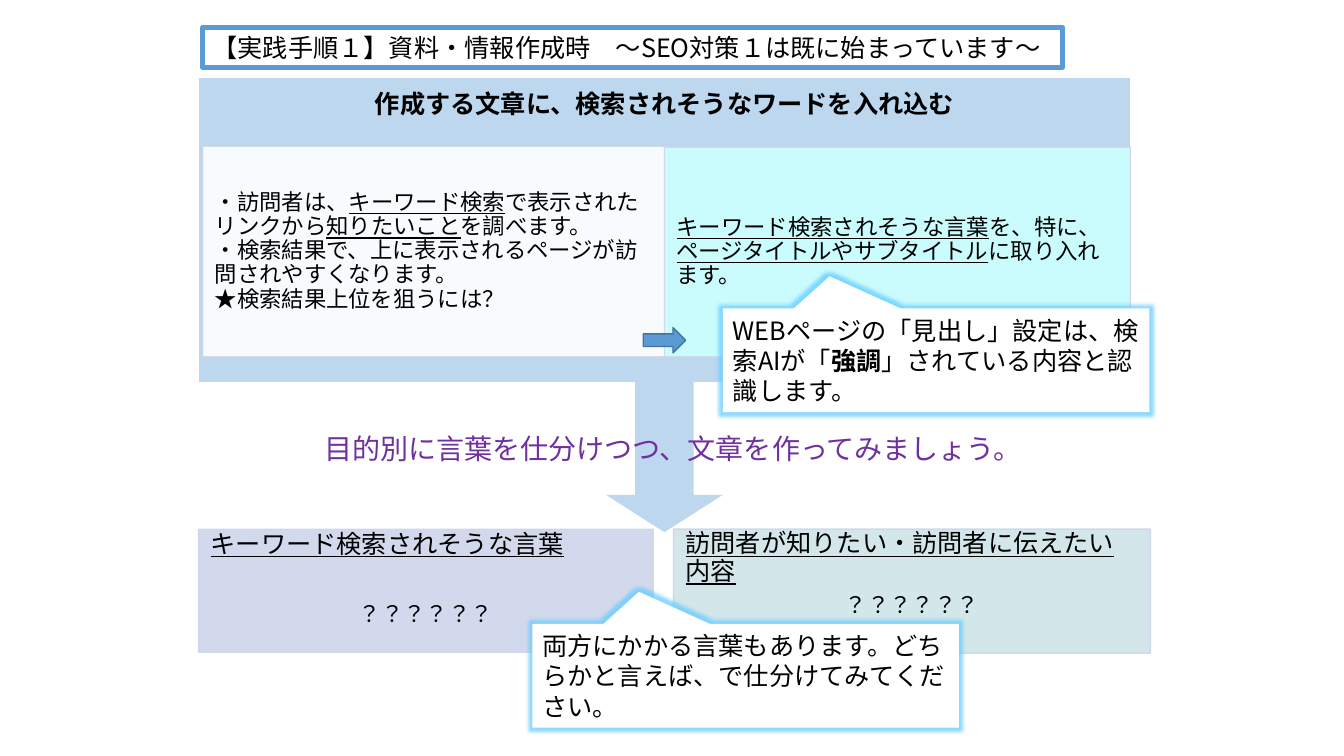
from lxml.etree import SubElement
from pptx import Presentation
from pptx.dml.color import RGBColor
from pptx.enum.shapes import MSO_SHAPE as SHAPE
from pptx.enum.text import MSO_ANCHOR as ANCHOR, PP_ALIGN as ALIGN
from pptx.oxml.ns import qn
from pptx.util import Inches, Pt

FONT = "Noto Sans CJK JP"
COLORS = {
    "white": "FFFFFF", "black": "000000", "purple": "7030A0",
    "sky": "BDD7EE", "blue": "5B9BD5", "navy": "43739E", "glow": "66CCFF",
    "aqua": "CCFFFF", "teal": "CFE5E8", "lavender": "CFD5EA",
}
DEFAULT_INSETS = (0.1, 0.05)
PANEL_INSETS = (0.12, 0.02)


class SlideBuilder:
    def __init__(self, slide):
        self.shapes = slide.shapes

    def set_alpha(self, fill, percent):
        color = fill.find(".//" + qn("a:srgbClr"))
        SubElement(color, qn("a:alpha"), val=str(percent * 1000))

    def shape(self, kind, box, fill, line=None, width=1):
        s = self.shapes.add_shape(kind, *map(Inches, box))
        s.shadow.inherit = False
        s.fill.solid()
        s.fill.fore_color.rgb = RGBColor.from_string(COLORS[fill])
        if line:
            s.line.color.rgb = RGBColor.from_string(COLORS[line])
            s.line.width = Pt(width)
        else:
            s.line.fill.background()
        return s

    def frame(self, s, anchor=ANCHOR.TOP, insets=DEFAULT_INSETS):
        tf = s.text_frame
        tf.word_wrap = True
        tf.vertical_anchor = anchor
        tf.margin_left = tf.margin_right = Inches(insets[0])
        tf.margin_top = tf.margin_bottom = Inches(insets[1])
        return tf

    def paragraph(self, p, lines, size, color="black", align=ALIGN.LEFT,
                  tight=False, before=0):
        """Fill p with lines of (text, style) runs; style is "", "b" or "u"."""
        p.alignment = align
        if tight:
            p.line_spacing = 0.9
            p.space_after = Pt(round(size * 0.35, 1))
        if before:
            p.space_before = Pt(before)
        p.font.size = Pt(size)
        p.font.color.rgb = RGBColor.from_string(COLORS[color])
        p.font.name = FONT
        SubElement(p._p.pPr.find(qn("a:defRPr")), qn("a:ea"), typeface=FONT)
        for i, line in enumerate(lines):
            if i:
                p.add_line_break()
            for text, style in line:
                r = p.add_run()
                r.text = text
                if style == "b":
                    r.font.bold = True
                elif style == "u":
                    r.font.underline = True

    def panel(self, box, fill, anchor=ANCHOR.TOP):
        s = self.shape(SHAPE.RECTANGLE, box, fill, "lavender")
        self.set_alpha(s._element.spPr.find(qn("a:solidFill")), 90)
        self.set_alpha(s._element.spPr.find(qn("a:ln")), 90)
        return self.frame(s, anchor, PANEL_INSETS)

    def explanation(self, box, fill, lines):
        tf = self.panel(box, fill, ANCHOR.MIDDLE)
        self.paragraph(tf.paragraphs[0], lines, 16, tight=True)

    def word_list(self, box, fill, heading, gap=0):
        tf = self.panel(box, fill)
        self.paragraph(tf.paragraphs[0], [[(heading, "u")]], 18, tight=True)
        self.paragraph(tf.add_paragraph(), [[("？？？？？？", "")]], 16,
                       align=ALIGN.CENTER, tight=True, before=gap)

    def callout(self, left, top, runs):
        s = self.shape(SHAPE.RECTANGULAR_CALLOUT, (left, top, 4.23, 1.03), "white")
        s.adjustments[0], s.adjustments[1] = -0.25, -0.81
        effects = s._element.spPr.find(qn("a:effectLst"))
        glow = SubElement(effects, qn("a:glow"), rad=str(Inches(0.08)))
        SubElement(glow, qn("a:srgbClr"), val=COLORS["glow"])
        self.set_alpha(glow, 75)
        tf = self.frame(s, ANCHOR.MIDDLE)
        self.paragraph(tf.paragraphs[0], [runs], 18)

    def label(self, box, text, size, color):
        tf = self.frame(self.shapes.add_textbox(*map(Inches, box)))
        self.paragraph(tf.paragraphs[0], [[(text, "")]], size, color, ALIGN.CENTER)


def main():
    prs = Presentation()
    prs.slide_width, prs.slide_height = Inches(13.33), Inches(7.5)
    b = SlideBuilder(prs.slides.add_slide(prs.slide_layouts[6]))

    step = b.shape(SHAPE.RECTANGLE, (1.97, 0.77, 9.24, 3.03), "sky", "white")
    tf = b.frame(step, insets=(0.14, 0.14))
    b.paragraph(tf.paragraphs[0],
                [[("作成する文章に、検索されそうなワードを入れ込む", "b")]],
                18, align=ALIGN.CENTER, tight=True)

    b.explanation((2.01, 1.45, 4.62, 2.09), "white", [
        [("・訪問者は、", ""), ("キーワード検索", "u"),
         ("で表示されたリンクから", ""), ("知りたいこと", "u"),
         ("を調べます。", "")],
        [("・検索結果で、上に表示されるページが訪問されやすくなります。", "")],
        [("★検索結果上位を狙うには？", "")],
    ])
    b.explanation((6.59, 1.46, 4.62, 2.08), "aqua", [
        [("キーワード検索されそうな言葉", "u"), ("を、特に、", ""),
         ("ページタイトルやサブタイトル", "u"), ("に取り入れます。", "")],
    ])
    b.shape(SHAPE.RIGHT_ARROW, (6.38, 3.25, 0.42, 0.25), "blue", "navy")

    title = b.shape(SHAPE.RECTANGLE, (2.01, 0.27, 8.53, 0.4), "white", "blue", 3.5)
    b.paragraph(b.frame(title).paragraphs[0],
                [[("【実践手順１】資料・情報作成時　～SEO対策１は既に始まっています～", "")]], 18)

    b.callout(7.17, 3.06, [
        ("WEBページの「見出し」設定は、検索AIが「", ""), ("強調", "b"),
        ("」されている内容と認識します。", "")])

    arrow = b.shape(SHAPE.DOWN_ARROW, (6.01, 3.7, 1.16, 1.58), "sky")
    arrow.adjustments[1] = 0.32
    b.label((2.36, 4.23, 8.63, 0.44),
            "目的別に言葉を仕分けつつ、文章を作ってみましょう。", 20, "purple")

    b.word_list((6.68, 5.25, 4.73, 1.23), "teal",
                "訪問者が知りたい・訪問者に伝えたい内容")
    b.word_list((1.97, 5.25, 4.51, 1.22), "lavender",
                "キーワード検索されそうな言葉", gap=26)
    b.callout(5.28, 6.19, [
        ("両方にかかる言葉もあります。どちらかと言えば、で仕分けてみてください。", "")])

    prs.save("out.pptx")


if __name__ == "__main__":
    main()
